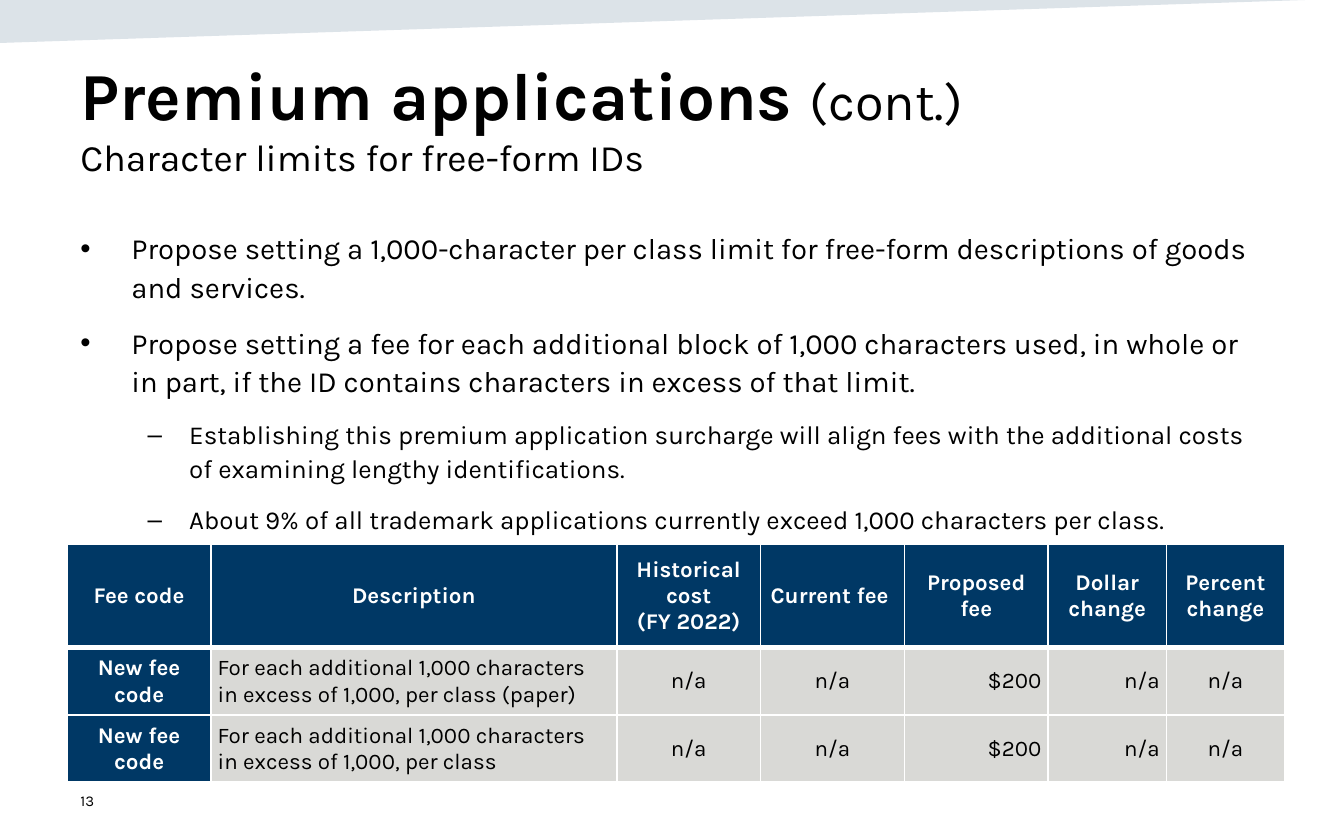
import pptx
import pptx.dml.color
import pptx.enum.text
import pptx.oxml
import pptx.oxml.ns
import pptx.util
from pptx.util import Inches

FONT = "Karla"
BLACK, WHITE, NAVY, GREY, BAND = "000000", "FFFFFF", "003865", "D9D9D6", "164469"
ALIGN = pptx.enum.text.PP_ALIGN
ANCHOR = pptx.enum.text.MSO_ANCHOR

BULLETS = [
    (0, "Propose setting a 1,000-character per class limit for free-form "
        "descriptions of goods and services."),
    (0, "Propose setting a fee for each additional block of 1,000 characters used, "
        "in whole or in part, if the ID contains characters in excess of that limit."),
    (1, "Establishing this premium application surcharge will align fees with the "
        "additional costs of examining lengthy identifications."),
    (1, "About 9% of all trademark applications currently exceed 1,000 characters per class."),
]
# Per level: character, size, left margin, hanging indent
LEVELS = [("•", 15.7, 0.38, 0.38), ("–", 13.9, 0.81, 0.31)]

HEADERS = ["Fee code", "Description", "Historical cost\n(FY 2022)", "Current fee ",
           "Proposed fee", "Dollar change", "Percent change"]
FEES = [
    ["New fee code", f"For each additional 1,000 characters in excess of 1,000, per class{suffix}",
     "n/a", "n/a", "$200", "n/a", "n/a"]
    for suffix in (" (paper)", "")
]
COLUMN_WIDTHS = [1.07, 3.02, 1.07, 1.07, 1.07, 0.88, 0.88]
ROW_HEIGHTS = [0.77, 0.49, 0.49]
COLUMN_ALIGN = [ALIGN.CENTER, ALIGN.LEFT, ALIGN.CENTER, ALIGN.CENTER,
                ALIGN.RIGHT, ALIGN.RIGHT, ALIGN.CENTER]


def rgb(color):
    return pptx.dml.color.RGBColor.from_string(color)


def xml(markup):
    head, tail = markup.split(" ", 1)
    return pptx.oxml.parse_xml(f"{head} {pptx.oxml.ns.nsdecls('a')} {tail}")


def style(run, size, color=BLACK, bold=False):
    run.font.name = FONT
    run.font.size = pptx.util.Pt(size)
    run.font.bold = bold
    run.font.color.rgb = rgb(color)


def add_text_frame(slide, left, top, width, height, anchor):
    box = slide.shapes.add_textbox(Inches(left), Inches(top), Inches(width), Inches(height))
    box.text_frame.word_wrap = True
    box.text_frame.vertical_anchor = anchor
    return box.text_frame


def add_band(slide):
    builder = slide.shapes.build_freeform(0, 0, scale=1.0)
    builder.add_line_segments([(0, Inches(0.32)), (Inches(10.02), Inches(-0.01))], close=True)
    band = builder.convert_to_shape()
    band.shadow.inherit = False
    band.line.fill.background()
    band.fill.solid()
    band.fill.fore_color.rgb = rgb(BAND)
    color = band.fill._xPr.find(".//" + pptx.oxml.ns.qn("a:srgbClr"))
    color.append(xml('<a:alpha val="15000"/>'))


def add_title(slide):
    title = add_text_frame(slide, 0.5, 0.34, 9, 1.04, ANCHOR.BOTTOM).paragraphs[0]
    title.text = "Premium applications "
    style(title.runs[0], 36, bold=True)
    for text, size in (("(cont.)", 28), ("Character limits for free-form IDs", 20)):
        run = title.add_run()
        run.text = text
        style(run, size)
        if size == 28:
            title.add_line_break()


def add_bullets(slide):
    body = add_text_frame(slide, 0.5, 1.64, 9, 2.41, ANCHOR.TOP)
    body.text = "\n".join(text for _, text in BULLETS)
    for paragraph, (level, _) in zip(body.paragraphs, BULLETS):
        mark, size, margin, hanging = LEVELS[level]
        paragraph.level = level
        paragraph.line_spacing = 1.1
        paragraph.space_before = pptx.util.Pt(9)
        style(paragraph.runs[0], size)
        properties = paragraph._p.get_or_add_pPr()
        properties.set("marL", str(Inches(margin)))
        properties.set("indent", str(-Inches(hanging)))
        properties.append(xml('<a:buFont typeface="Arial"/>'))
        properties.append(xml(f'<a:buChar char="{mark}"/>'))


def set_borders(cell, top, bottom):
    for side, points in (("L", 1), ("R", 1), ("T", top), ("B", bottom)):
        cell._tc.get_or_add_tcPr().append(xml(
            f'<a:ln{side} w="{pptx.util.Pt(points)}"><a:solidFill>'
            f'<a:srgbClr val="{WHITE}"/></a:solidFill></a:ln{side}>'))


def format_cell(cell, row, column):
    header = row == 0
    dark = header or column == 0
    set_borders(cell, top=3 if row == 1 else 1, bottom=3 if header else 1)
    cell.fill.solid()
    cell.fill.fore_color.rgb = rgb(NAVY if dark else GREY)
    cell.vertical_anchor = ANCHOR.MIDDLE
    cell.margin_left = cell.margin_right = Inches(0.07 if header else 0.05)
    cell.margin_top = cell.margin_bottom = Inches(0 if header else 0.05)
    for paragraph in cell.text_frame.paragraphs:
        paragraph.alignment = ALIGN.CENTER if header else COLUMN_ALIGN[column]
        if not header:
            paragraph.space_before = paragraph.space_after = pptx.util.Pt(6)
        style(paragraph.runs[0], 12, WHITE if dark else BLACK, bold=dark)


def add_fee_table(slide):
    rows = [HEADERS] + FEES
    fees = slide.shapes.add_table(
        len(rows), len(HEADERS), Inches(0.5), Inches(4.05),
        Inches(sum(COLUMN_WIDTHS)), Inches(sum(ROW_HEIGHTS))).table
    fees.horz_banding = False
    for column, width in zip(fees.columns, COLUMN_WIDTHS):
        column.width = Inches(width)
    for r, (values, height) in enumerate(zip(rows, ROW_HEIGHTS)):
        fees.rows[r].height = Inches(height)
        for c, value in enumerate(values):
            cell = fees.cell(r, c)
            cell.text_frame.text = value
            format_cell(cell, r, c)


def add_page_number(slide):
    number = add_text_frame(slide, 0.5, 5.79, 2.25, 0.33, ANCHOR.MIDDLE)
    number.text = "13"
    style(number.paragraphs[0].runs[0], 8)


def main():
    deck = pptx.Presentation()
    deck.slide_width, deck.slide_height = Inches(10), Inches(6.25)
    slide = deck.slides.add_slide(deck.slide_layouts[6])

    # Decoration and page number
    add_band(slide)
    add_page_number(slide)

    # Content
    add_title(slide)
    add_bullets(slide)
    add_fee_table(slide)

    deck.save("out.pptx")


if __name__ == "__main__":
    main()
